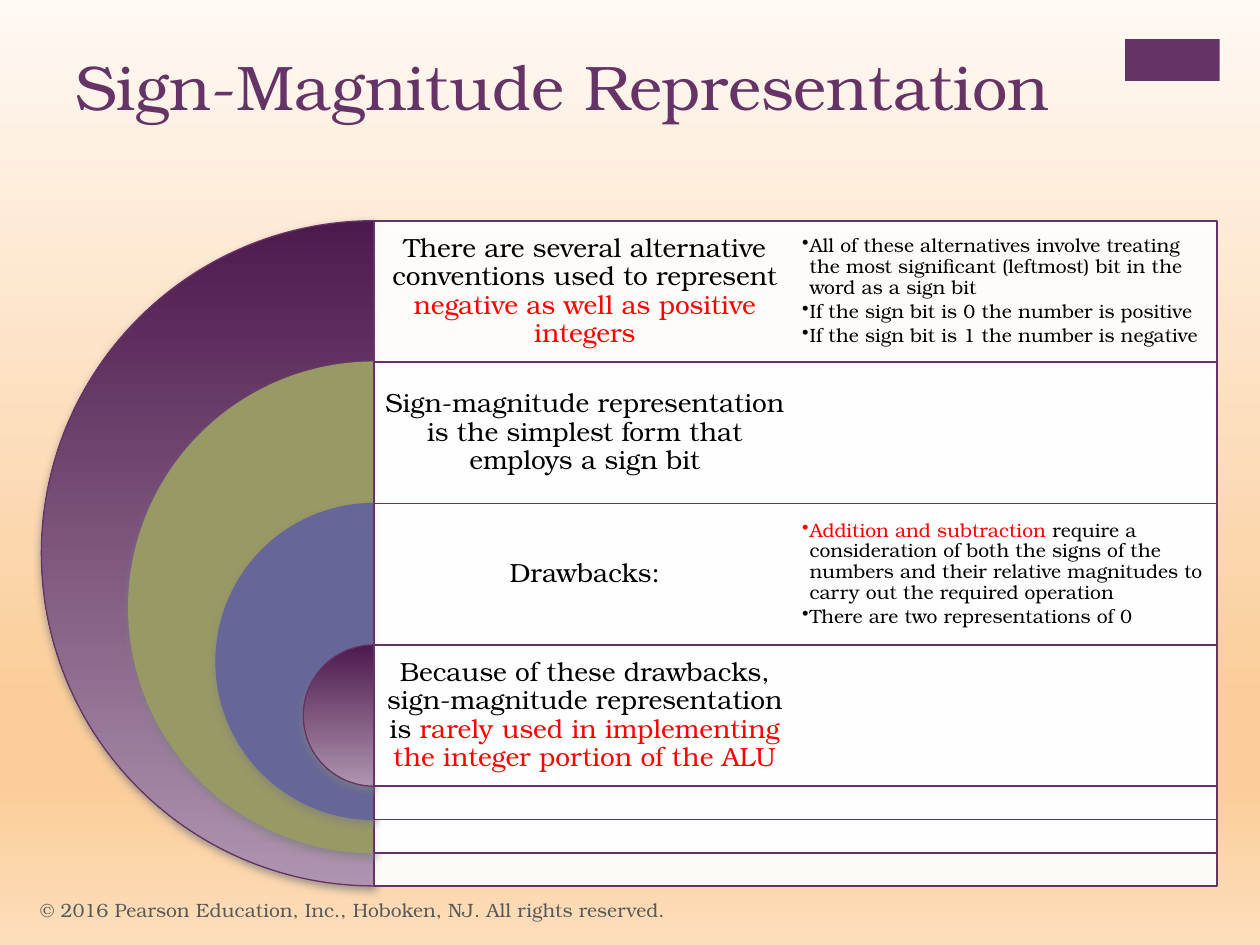
from lxml import etree
from pptx import Presentation
from pptx.dml.color import RGBColor
from pptx.enum.shapes import MSO_SHAPE
from pptx.enum.text import MSO_ANCHOR, PP_ALIGN
from pptx.oxml import parse_xml
from pptx.oxml.ns import nsdecls, qn
from pptx.util import Cm, Pt

FONT = "TeX Gyre Bonum"
PURPLE = RGBColor(0x66, 0x33, 0x66)
OLIVE = RGBColor(0x99, 0x99, 0x66)
SLATE = RGBColor(0x66, 0x66, 0x99)
WHITE = RGBColor(0xFF, 0xFF, 0xFF)
BLACK = RGBColor(0, 0, 0)
RED = RGBColor(0xFF, 0, 0)
GRAY = RGBColor(0x59, 0x59, 0x59)
PLUM_DARK = RGBColor(0x4D, 0x1A, 0x4D)
PLUM_LIGHT = RGBColor(0xAF, 0x94, 0xAF)
SKY = [(0, RGBColor(0xFF, 0xF9, 0xF4)), (74, RGBColor(0xFB, 0xCD, 0x9A)),
       (83, RGBColor(0xFB, 0xCD, 0x9A)), (100, RGBColor(0xFD, 0xDE, 0xBB))]

SHADOW = (f'<a:effectLst {nsdecls("a")}><a:outerShdw blurRad="63500" dist="25400" '
          'dir="5400000" rotWithShape="0"><a:srgbClr val="808080">'
          '<a:alpha val="75000"/></a:srgbClr></a:outerShdw></a:effectLst>')


def fill_gradient(fill, owner, stops):
    """Fill from top to bottom; owner is the element that holds the fill."""
    fill.gradient()
    fill.gradient_angle = 270
    stop_list = owner.find(".//" + qn("a:gsLst"))
    for old_stop in list(stop_list):
        stop_list.remove(old_stop)
    for percent, color in stops:
        stop = etree.SubElement(stop_list, qn("a:gs"), pos=str(percent * 1000))
        etree.SubElement(stop, qn("a:srgbClr"), val=str(color))


def add_text(box, paragraphs, size, anchor=MSO_ANCHOR.MIDDLE, inset=None,
             align=PP_ALIGN.LEFT, spacing=None, bullets=False):
    """Add a text box; each paragraph is a list of (text, colour) runs."""
    frame = slide.shapes.add_textbox(*(Cm(length) for length in box)).text_frame
    frame.word_wrap = True
    frame.vertical_anchor = anchor
    if inset is not None:
        frame.margin_left = frame.margin_right = Cm(inset)
        frame.margin_top = frame.margin_bottom = Cm(inset)
    for number, runs in enumerate(paragraphs):
        paragraph = frame.add_paragraph() if number else frame.paragraphs[0]
        paragraph.alignment = align
        paragraph.line_spacing = spacing
        if bullets:
            paragraph.space_after = Pt(2)
            properties = paragraph._p.get_or_add_pPr()
            properties.set("marL", str(Cm(0.15)))
            properties.set("indent", str(-Cm(0.15)))
            etree.SubElement(properties, qn("a:buChar"), char="•")
        for text, color in runs:
            run = paragraph.add_run()
            run.text = text
            run.font.name = FONT
            run.font.size = Pt(size)
            run.font.color.rgb = color


presentation = Presentation()
presentation.slide_width = Cm(25.4)
presentation.slide_height = Cm(19.05)
slide = presentation.slides.add_slide(presentation.slide_layouts[6])
fill_gradient(slide.background.fill, slide.element, SKY)

corner_block = slide.shapes.add_shape(
    MSO_SHAPE.RECTANGLE, Cm(22.68), Cm(0.79), Cm(1.91), Cm(0.84))
corner_block.shadow.inherit = False
corner_block.fill.solid()
corner_block.fill.fore_color.rgb = PURPLE
corner_block.line.fill.background()

add_text((1.27, 0.84, 20.98, 3.1), [[("Sign-Magnitude Representation", PURPLE)]],
         36, anchor=MSO_ANCHOR.TOP)

# Nested half discs, each with a panel of the same height to its right
CENTER_X, TOP, ROW = 7.54, 4.45, 2.85
OUTER, SHRINK = 13.41, 3.52
PANEL_WIDTH = 17
COLUMN = PANEL_WIDTH / 2

# (disc colour or None for the plum gradient, statement, details)
levels = [
    (None,
     [("There are several alternative conventions used to represent ", BLACK),
      ("negative as well as positive integers", RED)],
     [[("All of these alternatives involve treating the most significant "
        "(leftmost) bit in the word as a sign bit", BLACK)],
      [("If the sign bit is 0 the number is positive", BLACK)],
      [("If the sign bit is 1 the number is negative", BLACK)]]),
    (OLIVE,
     [("Sign-magnitude representation is the simplest form that employs "
       "a sign bit", BLACK)],
     []),
    (SLATE,
     [("Drawbacks:", BLACK)],
     [[("Addition and subtraction ", RED),
       ("require a consideration of both the signs of the numbers and their "
        "relative magnitudes to carry out the required operation", BLACK)],
      [("There are two representations of 0", BLACK)]]),
    (None,
     [("Because of these drawbacks, sign-magnitude representation is ", BLACK),
      ("rarely used in implementing the integer portion of the ALU", RED)],
     []),
]

for level, (disc_color, statement, details) in enumerate(levels):
    top = TOP + level * ROW
    diameter = OUTER - level * SHRINK

    disc = slide.shapes.add_shape(
        MSO_SHAPE.PIE, Cm(CENTER_X - diameter / 2), Cm(top), Cm(diameter), Cm(diameter))
    disc.adjustments[0] = 54
    disc.adjustments[1] = 162
    if disc_color is None:
        fill_gradient(disc.fill, disc.element.spPr, [(0, PLUM_DARK), (100, PLUM_LIGHT)])
    else:
        disc.fill.solid()
        disc.fill.fore_color.rgb = disc_color
    disc.line.color.rgb = disc_color or PURPLE
    disc.line.width = Pt(0.75)
    disc.element.spPr.append(parse_xml(SHADOW))

    panel = slide.shapes.add_shape(
        MSO_SHAPE.RECTANGLE, Cm(CENTER_X), Cm(top), Cm(PANEL_WIDTH), Cm(diameter))
    panel.shadow.inherit = False
    panel.fill.solid()
    panel.fill.fore_color.rgb = WHITE
    panel_color = panel.element.spPr.find(qn("a:solidFill")).find(qn("a:srgbClr"))
    etree.SubElement(panel_color, qn("a:alpha"), val="90000")
    panel.line.color.rgb = PURPLE
    panel.line.width = Pt(1)

    add_text((CENTER_X, top, COLUMN, ROW), [statement], 15, inset=0.15,
             align=PP_ALIGN.CENTER, spacing=0.9)
    if details:
        add_text((CENTER_X + COLUMN, top, COLUMN, ROW), details, 11, inset=0.13,
                 spacing=0.9, bullets=True)

add_text((0.56, 17.83, 17.02, 1.02),
         [[("© 2016 Pearson Education, Inc., Hoboken, NJ. All rights reserved.", GRAY)]],
         11)

presentation.save("out.pptx")
